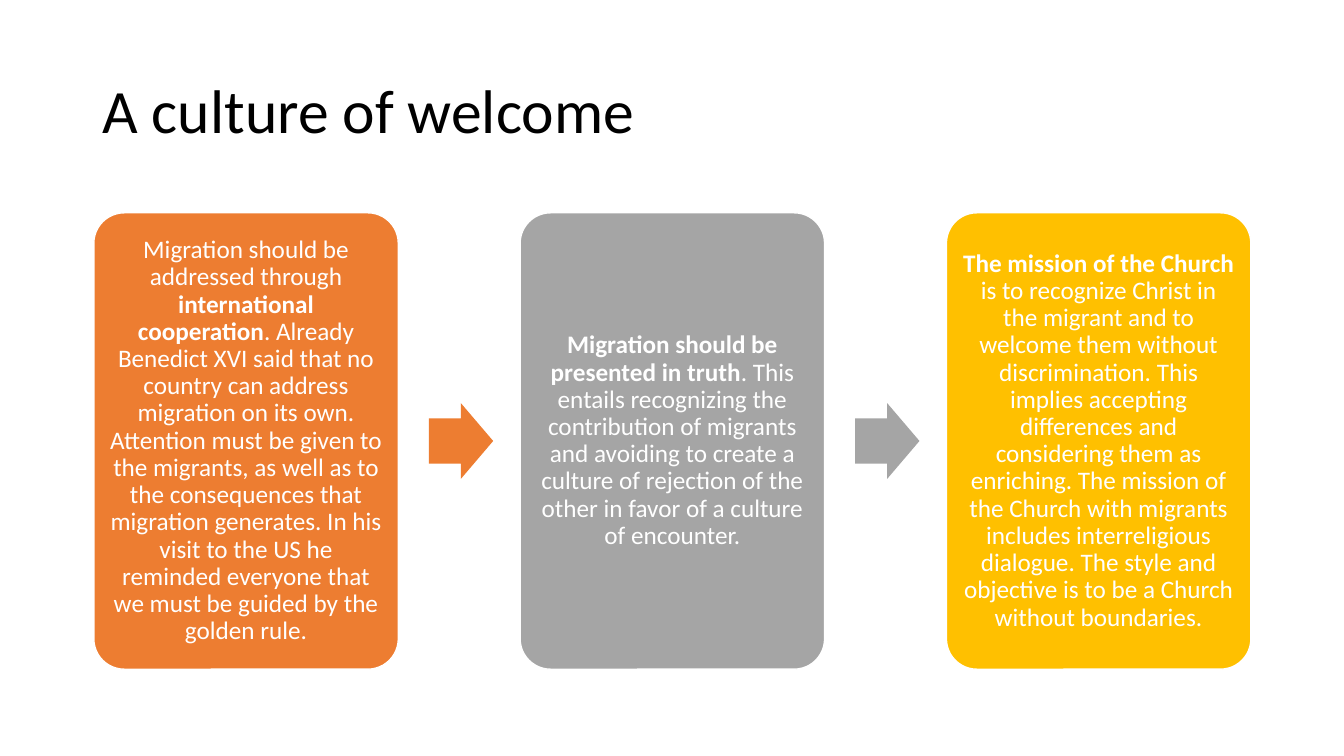
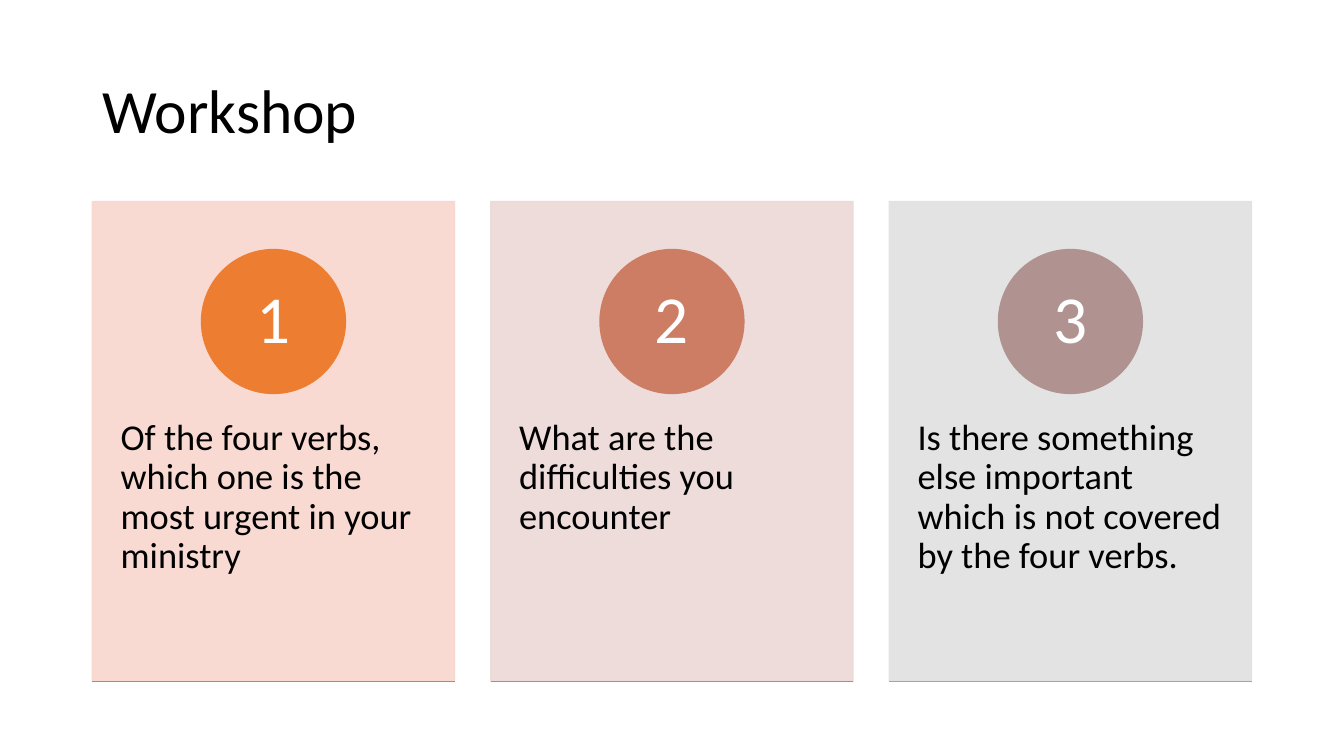
"""Build two slides: three linked statements on welcome, and three workshop questions."""
from dataclasses import dataclass

from lxml import etree
from pptx import Presentation
from pptx.dml.color import RGBColor
from pptx.enum.shapes import MSO_CONNECTOR, MSO_SHAPE
from pptx.enum.text import MSO_ANCHOR, PP_ALIGN
from pptx.oxml.ns import qn
from pptx.presentation import Presentation as Deck
from pptx.shapes.autoshape import Shape
from pptx.slide import Slide
from pptx.text.text import TextFrame
from pptx.util import Pt

ROUNDED, ARROW = MSO_SHAPE.ROUNDED_RECTANGLE, MSO_SHAPE.RIGHT_ARROW
RECTANGLE, OVAL = MSO_SHAPE.RECTANGLE, MSO_SHAPE.OVAL
STRAIGHT = MSO_CONNECTOR.STRAIGHT
TOP, MIDDLE = MSO_ANCHOR.TOP, MSO_ANCHOR.MIDDLE
LEFT, CENTER = PP_ALIGN.LEFT, PP_ALIGN.CENTER

BLACK = RGBColor(0x00, 0x00, 0x00)
WHITE = RGBColor(0xFF, 0xFF, 0xFF)
ORANGE = RGBColor(0xED, 0x7D, 0x31)
GRAY = RGBColor(0xA5, 0xA5, 0xA5)
GOLD = RGBColor(0xFF, 0xC0, 0x00)
PEACH = RGBColor(0xF8, 0xD7, 0xCE)
BLUSH = RGBColor(0xED, 0xD9, 0xD7)
SILVER = RGBColor(0xE1, 0xE1, 0xE1)
TERRACOTTA = RGBColor(0xCC, 0x7D, 0x64)
MAUVE = RGBColor(0xB0, 0x93, 0x91)
RUST = RGBColor(0xDC, 0x7A, 0x4B)
ROSEWOOD = RGBColor(0xBD, 0x86, 0x7B)

FONT = "Calibri"
SLIDE_WIDTH, SLIDE_HEIGHT = 960, 540
CONTENT_LEFT, CONTENT_WIDTH = 66, 828
TITLE_TOP, TITLE_HEIGHT = 28.75, 104.4
TITLE_ONLY = 5


@dataclass(frozen=True)
class Run:
    """A piece of text in one weight."""

    text: str
    bold: bool = False


@dataclass(frozen=True)
class Box:
    """A position and size in points."""

    left: float
    top: float
    width: float
    height: float


@dataclass(frozen=True)
class TextStyle:
    """The look and placement of a paragraph in its shape."""

    size: float
    color: RGBColor
    align: PP_ALIGN
    anchor: MSO_ANCHOR
    side_inset: float
    top_inset: float


@dataclass(frozen=True)
class Statement:
    """A card in the welcome sequence."""

    color: RGBColor
    runs: tuple[Run, ...]


@dataclass(frozen=True)
class Question:
    """A numbered workshop card."""

    text: str
    panel: RGBColor
    badge: RGBColor
    rule: RGBColor


TITLE_STYLE = TextStyle(44, BLACK, LEFT, MIDDLE, 7.2, 3.6)
STATEMENT_STYLE = TextStyle(18, WHITE, CENTER, MIDDLE, 5.2, 5.2)
QUESTION_STYLE = TextStyle(26, BLACK, LEFT, TOP, 20.2, 155.5)
NUMBER_STYLE = TextStyle(48, WHITE, CENTER, MIDDLE, 8, 0.9)

STATEMENTS = (
    Statement(ORANGE, (
        Run("Migration should be addressed through "),
        Run("international cooperation", True),
        Run(". Already Benedict XVI said that no country can address migration on its own. "
            "Attention must be given to the migrants, as well as to the consequences that "
            "migration generates. In his visit to the US he reminded everyone that we must "
            "be guided by the golden rule."),
    )),
    Statement(GRAY, (
        Run("Migration should be presented in truth", True),
        Run(". This entails recognizing the contribution of migrants and avoiding to create "
            "a culture of rejection of the other in favor of a culture of encounter."),
    )),
    Statement(GOLD, (
        Run("The mission of the Church ", True),
        Run("is to recognize Christ in the migrant and to welcome them without "
            "discrimination. This implies accepting differences and considering them as "
            "enriching. The mission of the Church with migrants includes interreligious "
            "dialogue. The style and objective is to be a Church without boundaries."),
    )),
)

QUESTIONS = (
    Question("Of the four verbs, which one is the most urgent in your ministry",
             PEACH, ORANGE, RUST),
    Question("What are the difficulties you encounter", BLUSH, TERRACOTTA, ROSEWOOD),
    Question("Is there something else important which is not covered by the four verbs.",
             SILVER, MAUVE, GRAY),
)


def write(frame: TextFrame, runs: tuple[Run, ...], style: TextStyle) -> None:
    """Fill a text frame with one styled paragraph."""
    frame.word_wrap = True
    frame.vertical_anchor = style.anchor
    frame.margin_left = frame.margin_right = Pt(style.side_inset)
    frame.margin_top = Pt(style.top_inset)
    frame.margin_bottom = Pt(min(style.top_inset, style.side_inset))
    paragraph = frame.paragraphs[0]
    paragraph.alignment = style.align
    paragraph.line_spacing = 0.9
    for piece in runs:
        run = paragraph.add_run()
        run.text = piece.text
        run.font.name = FONT
        run.font.size = Pt(style.size)
        run.font.bold = piece.bold
        run.font.color.rgb = style.color


def add_filled(slide: Slide, kind: MSO_SHAPE, box: Box, fill: RGBColor,
               line: RGBColor | None = None) -> Shape:
    """Add a flat preset shape, outlined only when a line colour is given."""
    shape = slide.shapes.add_shape(kind, Pt(box.left), Pt(box.top), Pt(box.width), Pt(box.height))
    shape.shadow.inherit = False
    shape.fill.solid()
    shape.fill.fore_color.rgb = fill
    if line is None:
        shape.line.fill.background()
    else:
        shape.line.color.rgb = line
        shape.line.width = Pt(1)
    return shape


def make_translucent(shape: Shape, percent: int) -> None:
    """Set the opacity of a shape's fill and line."""
    for color in shape.fill._xPr.iter(qn("a:srgbClr")):
        etree.SubElement(color, qn("a:alpha")).set("val", str(percent * 1000))


def add_rule(slide: Slide, left: float, top: float, width: float, color: RGBColor) -> None:
    """Draw a thin horizontal rule."""
    rule = slide.shapes.add_connector(STRAIGHT, Pt(left), Pt(top), Pt(left + width), Pt(top))
    rule.line.color.rgb = color
    rule.line.width = Pt(1)
    etree.SubElement(rule._element.spPr, qn("a:effectLst"))


def add_titled_slide(deck: Deck, heading: str) -> Slide:
    """Add a title-only slide with the shared title style."""
    slide = deck.slides.add_slide(deck.slide_layouts[TITLE_ONLY])
    title = slide.shapes.title
    title.left, title.top = Pt(CONTENT_LEFT), Pt(TITLE_TOP)
    title.width, title.height = Pt(CONTENT_WIDTH), Pt(TITLE_HEIGHT)
    write(title.text_frame, (Run(heading),), TITLE_STYLE)
    return slide


def add_welcome_slide(deck: Deck) -> None:
    """Build the sequence of statements joined by block arrows."""
    slide = add_titled_slide(deck, "A culture of welcome")
    first_left, top, width, height = 67, 152, 217.5, 326
    arrow_width, arrow_height = 46, 54
    pitch = width * 1.4
    for index, statement in enumerate(STATEMENTS):
        left = first_left + index * pitch
        card = add_filled(slide, ROUNDED, Box(left, top, width, height), statement.color, WHITE)
        card.adjustments[0] = 0.1
        write(card.text_frame, statement.runs, STATEMENT_STYLE)
        if index < len(STATEMENTS) - 1:
            arrow_box = Box(left + width * 1.1, top + (height - arrow_height) / 2,
                            arrow_width, arrow_height)
            arrow = add_filled(slide, ARROW, arrow_box, statement.color)
            arrow.adjustments[0] = 0.6


def add_workshop_slide(deck: Deck) -> None:
    """Build the row of numbered question cards."""
    slide = add_titled_slide(deck, "Workshop")
    top, height = 144, 342.6
    width = CONTENT_WIDTH / 3.2
    pitch = width * 1.1
    diameter = height * 0.3
    for index, question in enumerate(QUESTIONS):
        left = CONTENT_LEFT + index * pitch
        panel = add_filled(slide, RECTANGLE, Box(left, top, width, height),
                           question.panel, question.panel)
        make_translucent(panel, 90)
        write(panel.text_frame, (Run(question.text),), QUESTION_STYLE)
        badge_box = Box(left + (width - diameter) / 2, top + height * 0.1, diameter, diameter)
        badge = add_filled(slide, OVAL, badge_box, question.badge, question.badge)
        write(badge.text_frame, (Run(str(index + 1)),), NUMBER_STYLE)
        add_rule(slide, left, top + height, width, question.rule)


def main() -> None:
    """Create and save the presentation."""
    deck = Presentation()
    deck.slide_width, deck.slide_height = Pt(SLIDE_WIDTH), Pt(SLIDE_HEIGHT)
    add_welcome_slide(deck)
    add_workshop_slide(deck)
    deck.save("out.pptx")


if __name__ == "__main__":
    main()
